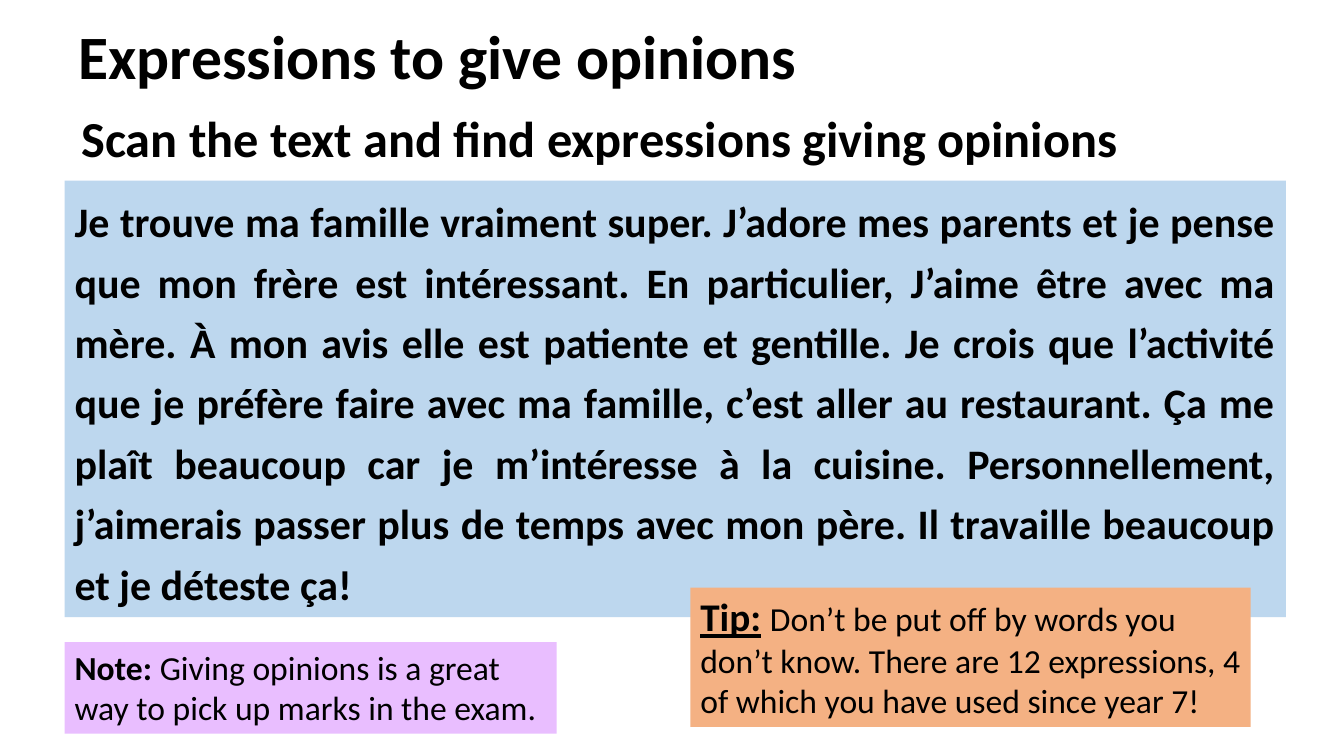
from dataclasses import dataclass

from pptx import Presentation
from pptx import util as u
from pptx.dml.color import RGBColor
from pptx.enum import text


@dataclass(frozen=True)
class Theme:
    """Colours, typeface and type sizes of the lesson."""
    font: str = "Calibri"
    ink: str = "000000"
    passage: str = "BDD7EE"
    note: str = "E9BEFF"
    tip: str = "F4B183"
    title_size: int = 44
    task_size: int = 36
    passage_size: int = 30
    label_size: int = 28
    body_size: int = 24


class LessonSlide:
    """Draws headings and coloured panels on one slide."""

    def __init__(self, prs, theme):
        self.theme = theme
        self.s = prs.slides.add_slide(prs.slide_layouts[6])

    def box(self, place, size, wrap=True, grow=True):
        """Add an empty text box and return its shape and first paragraph."""
        sp = self.s.shapes.add_textbox(*map(u.Cm, place))
        tf = sp.text_frame
        tf.word_wrap = wrap
        if grow:
            tf.auto_size = text.MSO_AUTO_SIZE.SHAPE_TO_FIT_TEXT
        p = tf.paragraphs[0]
        p.font.name = self.theme.font
        p.font.size = u.Pt(size)
        p.font.color.rgb = RGBColor.from_string(self.theme.ink)
        return sp, p

    def title(self, place, words):
        """Add the slide title, centred vertically in its box."""
        sp, p = self.box(place, self.theme.title_size, grow=False)
        sp.text_frame.vertical_anchor = text.MSO_ANCHOR.MIDDLE
        p.line_spacing = 0.9
        p.font.bold = True
        p.add_run().text = words

    def task(self, place, words):
        """Add the one-line instruction under the title."""
        _, p = self.box(place, self.theme.task_size, wrap=False)
        p.font.bold = True
        p.add_run().text = words

    def panel(self, place, fill, size):
        """Add a filled panel and return its paragraph."""
        sp, p = self.box(place, size)
        sp.fill.solid()
        sp.fill.fore_color.rgb = RGBColor.from_string(fill)
        return p

    def passage(self, place, words):
        """Add the justified reading passage."""
        p = self.panel(place, self.theme.passage, self.theme.passage_size)
        p.alignment = text.PP_ALIGN.JUSTIFY
        p.line_spacing = 1.2
        p.font.bold = True
        p.add_run().text = words

    def hint(self, place, fill, label, words, large=False):
        """Add a panel with a bold label, optionally large and underlined."""
        p = self.panel(place, fill, self.theme.body_size)
        r = p.add_run()
        r.text = label
        r.font.bold = True
        gap = p.add_run()
        gap.text = " "
        if large:
            r.font.underline = True
            r.font.size = gap.font.size = u.Pt(self.theme.label_size)
        p.add_run().text = words


def main():
    """Build the lesson slide and save it."""
    prs = Presentation()
    prs.slide_width, prs.slide_height = u.Cm(33.87), u.Cm(19.05)
    theme = Theme()
    slide = LessonSlide(prs, theme)
    slide.title((1.73, 0.41, 29.21, 2.18), "Expressions to give opinions")
    slide.passage(
        (1.63, 4.55, 30.78, 11),
        "Je trouve ma famille vraiment super. J’adore mes parents et je pense "
        "que mon frère est intéressant. En particulier, J’aime être avec ma "
        "mère. À mon avis elle est patiente et gentille. Je crois que l’activité "
        "que je préfère faire avec ma famille, c’est aller au restaurant. Ça me "
        "plaît beaucoup car je m’intéresse à la cuisine. Personnellement, "
        "j’aimerais passer plus de temps avec mon père. Il travaille beaucoup "
        "et je déteste ça!")
    slide.hint((1.63, 16.18, 12.4, 2.31), theme.note, "Note:",
               "Giving opinions is a great way to pick up marks in the exam.")
    slide.hint((17.4, 14.81, 14.12, 3.51), theme.tip, "Tip:",
               "Don’t be put off by words you don’t know. There are 12 "
               "expressions, 4 of which you have used since year 7!", large=True)
    slide.task((1.8, 2.57, 26.97, 1.8),
               "Scan the text and find expressions giving opinions")
    prs.save("out.pptx")


if __name__ == "__main__":
    main()
